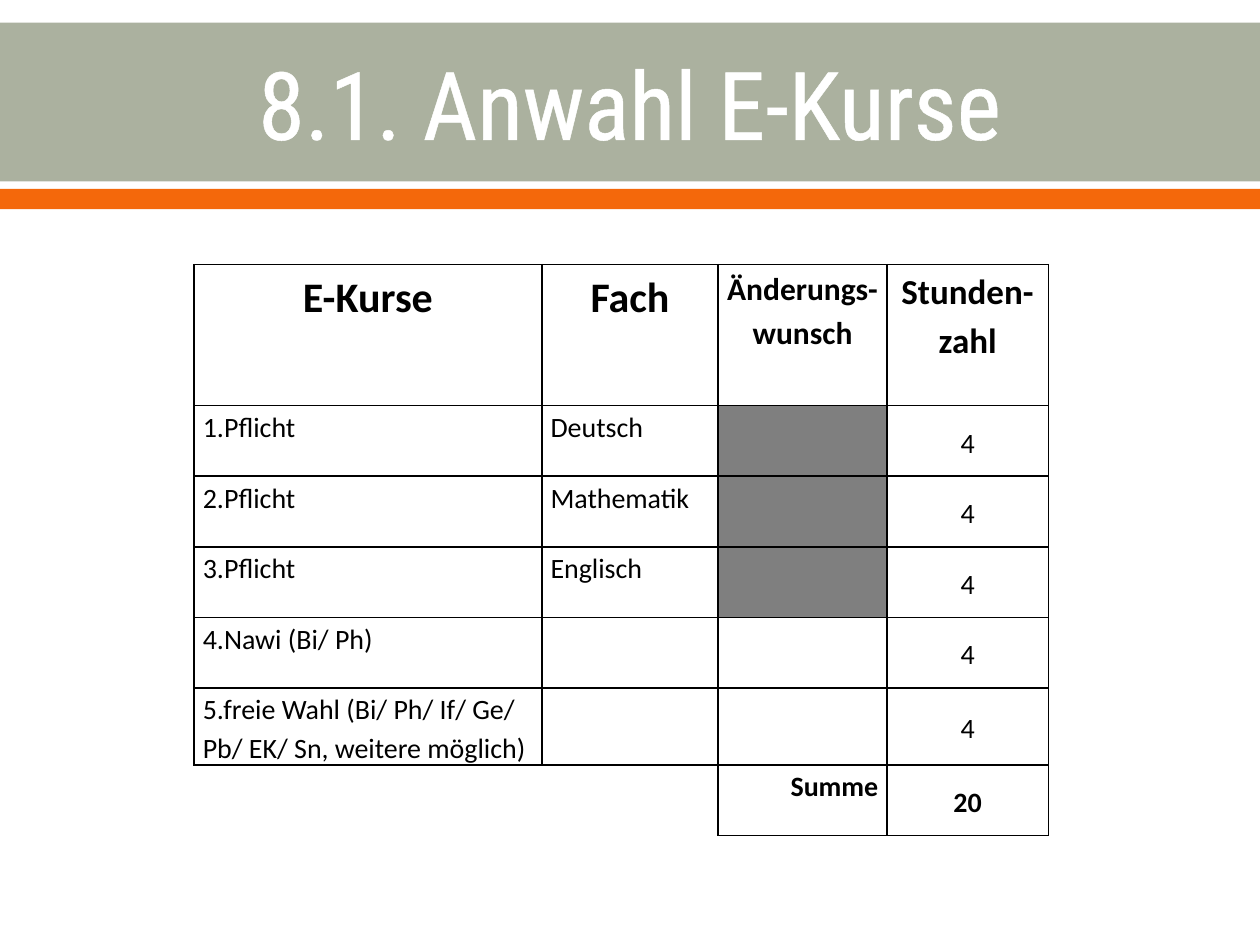
from lxml.etree import SubElement
from pptx import Presentation
from pptx.dml.color import RGBColor
from pptx.enum.shapes import MSO_SHAPE
from pptx.enum.text import MSO_ANCHOR, PP_ALIGN
from pptx.oxml import parse_xml
from pptx.oxml.ns import nsdecls, qn
from pptx.util import Inches, Pt

COLORS = {
    "band": "ABB19F",
    "accent": "F4680B",
    "title": "FFFFFF",
    "text": "000000",
    "blocked": "7F7F7F",
}
COL_WIDTHS = [2.76, 1.4, 1.34, 1.28]
HEADER_HEIGHT, ROW_HEIGHT = 1.12, 0.56
HEADERS = [("E-Kurse", 24), ("Fach", 24), ("Änderungs-wunsch", 18), ("Stunden-zahl", 20)]
COURSES = [
    ("1.Pflicht", "Deutsch"),
    ("2.Pflicht", "Mathematik"),
    ("3.Pflicht", "Englisch"),
    ("4.Nawi (Bi/ Ph)", ""),
    ("5.freie Wahl (Bi/ Ph/ If/ Ge/ Pb/ EK/ Sn, weitere möglich)", ""),
]


def rgb(name):
    return RGBColor.from_string(COLORS[name])


def add_bar(slide, top, height, color):
    sp = slide.shapes.add_shape(
        MSO_SHAPE.RECTANGLE, 0, Inches(top), Inches(10), Inches(height))
    sp.shadow.inherit = False
    sp.fill.solid()
    sp.fill.fore_color.rgb = rgb(color)
    sp.line.fill.background()


def add_title(slide, text):
    box = slide.shapes.add_textbox(Inches(0.5), Inches(0.2), Inches(9), Inches(1.22))
    tf = box.text_frame
    tf.word_wrap = True
    tf.vertical_anchor = MSO_ANCHOR.MIDDLE
    p = tf.paragraphs[0]
    p.alignment = PP_ALIGN.CENTER
    r = p.add_run()
    r.text = text
    r.font.size = Pt(54)
    r.font.name = "Roboto Condensed"
    r.font.color.rgb = rgb("title")
    # Thin outline in the text colour
    r.font._element.insert(0, parse_xml(
        f'<a:ln {nsdecls("a")} w="{Pt(1.1)}"><a:solidFill>'
        f'<a:srgbClr val="{COLORS["title"]}"/></a:solidFill></a:ln>'))


def set_borders(cell, sides="LRTB"):
    tcPr = cell._tc.get_or_add_tcPr()
    for i, side in enumerate("LRTB"):
        ln = SubElement(tcPr, qn(f"a:ln{side}"), w=str(Pt(1)))
        if side in sides:
            fill = SubElement(ln, qn("a:solidFill"))
            SubElement(fill, qn("a:srgbClr"), val=COLORS["text"])
        else:
            SubElement(ln, qn("a:noFill"))
        tcPr.insert(i, ln)


def fill_cell(cell, text, size=16, bold=False, align=PP_ALIGN.LEFT, anchor=MSO_ANCHOR.TOP):
    cell.margin_left = cell.margin_right = Inches(0.07)
    cell.margin_top = cell.margin_bottom = 0
    cell.vertical_anchor = anchor
    p = cell.text_frame.paragraphs[0]
    p.text = text
    p.alignment = align
    p.line_spacing = 1.15
    p.font.size = Pt(size)
    p.font.bold = bold
    p.font.name = "Calibri"
    p.font.color.rgb = rgb("text")


def add_course_table(slide):
    n_rows = len(COURSES) + 2
    height = HEADER_HEIGHT + ROW_HEIGHT * (n_rows - 1)
    table = slide.shapes.add_table(
        n_rows, len(COL_WIDTHS), Inches(1.54), Inches(2.1),
        Inches(sum(COL_WIDTHS)), Inches(height)).table
    table.first_row = table.horz_banding = False
    for column, width in zip(table.columns, COL_WIDTHS):
        column.width = Inches(width)
    for i, row in enumerate(table.rows):
        row.height = Inches(ROW_HEIGHT if i else HEADER_HEIGHT)

    # Header row
    for col, (text, size) in enumerate(HEADERS):
        fill_cell(table.cell(0, col), text, size, True, PP_ALIGN.CENTER)

    # One row per course; the last column holds the hours
    hours = 4
    for row, (course, subject) in enumerate(COURSES, start=1):
        for col, text in enumerate((course, subject, "")):
            fill_cell(table.cell(row, col), text)
        fill_cell(table.cell(row, 3), str(hours),
                  align=PP_ALIGN.CENTER, anchor=MSO_ANCHOR.MIDDLE)

    # Sum row
    last = n_rows - 1
    table.cell(last, 0).merge(table.cell(last, 1))
    fill_cell(table.cell(last, 2), "Summe", bold=True, align=PP_ALIGN.RIGHT)
    fill_cell(table.cell(last, 3), str(hours * len(COURSES)), bold=True,
              align=PP_ALIGN.CENTER, anchor=MSO_ANCHOR.MIDDLE)

    # Fills and borders; fixed subjects cannot be changed
    for cell in table.iter_cells():
        cell.fill.background()
    for row, (_, subject) in enumerate(COURSES, start=1):
        if subject:
            fill = table.cell(row, 2).fill
            fill.solid()
            fill.fore_color.rgb = rgb("blocked")
    for cell in table.iter_cells():
        set_borders(cell, "TR" if cell.is_merge_origin or cell.is_spanned else "LRTB")


def main():
    prs = Presentation()
    prs.slide_width, prs.slide_height = Inches(10), Inches(7.5)
    slide = prs.slides.add_slide(prs.slide_layouts[6])
    # Title band with accent line
    add_bar(slide, 0.18, 1.26, "band")
    add_bar(slide, 1.5, 0.16, "accent")
    add_title(slide, "8.1. Anwahl E-Kurse")
    add_course_table(slide)
    prs.save("out.pptx")


if __name__ == "__main__":
    main()
